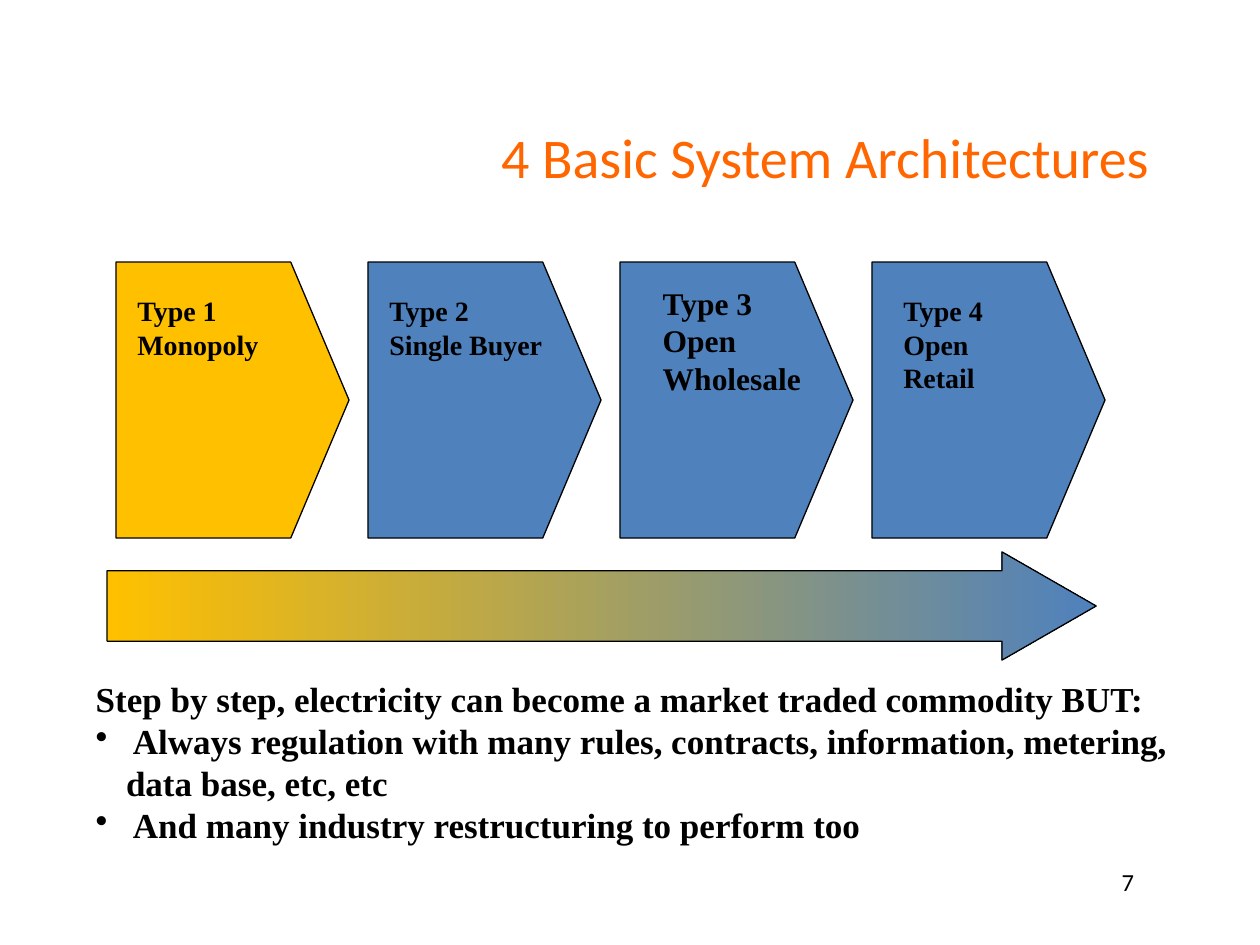
"""Builds a slide on the four basic architectures of an electricity system."""
from lxml.etree import SubElement
from pptx import Presentation
from pptx.dml.color import RGBColor as RGB
from pptx.enum.shapes import MSO_SHAPE as SHAPE
from pptx.enum.text import MSO_AUTO_SIZE as FIT, PP_ALIGN as ALIGN
from pptx.oxml.ns import qn
from pptx.util import Inches, Pt

COLORS = {"amber": "FFC000", "blue": "4F81BD", "black": "000000", "orange": "FF6600"}
SERIF, SANS = "Times New Roman", "Calibri"


class ArchitectureSlide:
    def __init__(self, deck):
        self.slide = deck.slides.add_slide(deck.slide_layouts[6])

    def color(self, name):
        return RGB.from_string(COLORS[name])

    def outlined(self, kind, box, adjustments):
        shape = self.slide.shapes.add_shape(kind, *map(Inches, box))
        shape.shadow.inherit = False
        for index, value in enumerate(adjustments):
            shape.adjustments[index] = value
        shape.line.color.rgb = self.color("black")
        shape.line.width = Pt(0.75)
        return shape

    def stage(self, box, fill):
        pentagon = self.outlined(SHAPE.PENTAGON, box, [0.25])
        pentagon.fill.solid()
        pentagon.fill.fore_color.rgb = self.color(fill)

    def progress_arrow(self, box, start, end):
        arrow = self.outlined(SHAPE.RIGHT_ARROW, box, [0.65, 0.87])
        arrow.fill.gradient()
        arrow.fill.gradient_angle = 0
        for stop, name, position in zip(arrow.fill.gradient_stops, (start, end), (0, 1)):
            stop.color.rgb = self.color(name)
            stop.position = position

    def text(self, box, lines, size, font=SANS, color="black", bold=False,
             align=ALIGN.LEFT, wrap=True):
        frame = self.slide.shapes.add_textbox(*map(Inches, box)).text_frame
        frame.word_wrap = wrap
        frame.text = "\n".join(lines)
        for paragraph in frame.paragraphs:
            paragraph.alignment = align
            paragraph.font.name = font
            paragraph.font.size = Pt(size)
            paragraph.font.bold = bold
            paragraph.font.color.rgb = self.color(color)
        return frame

    def serif_text(self, box, lines, size, wrap=False):
        frame = self.text(box, lines, size, SERIF, bold=True, wrap=wrap)
        frame.auto_size = FIT.SHAPE_TO_FIT_TEXT
        frame.margin_left = Inches(0.09)
        frame.margin_top = frame.margin_right = frame.margin_bottom = 0
        return frame

    def remarks(self, box, heading, points, size):
        frame = self.serif_text(box, [], size, wrap=True)
        for index, line in enumerate([heading, *points]):
            paragraph = frame.add_paragraph() if index else frame.paragraphs[0]
            paragraph.text = line
            if index:
                properties = paragraph._p.get_or_add_pPr()
                properties.set("marL", str(Inches(0.24)))
                properties.set("indent", str(Inches(-0.24)))
                SubElement(properties, qn("a:buChar")).set("char", "•")
            paragraph.font.name = SERIF
            paragraph.font.size = Pt(size)
            paragraph.font.bold = True
            paragraph.font.color.rgb = self.color("black")


def main():
    deck = Presentation()
    deck.slide_width, deck.slide_height = Inches(10), Inches(7.5)
    page = ArchitectureSlide(deck)

    stages = [
        ("amber", ["Type 1", "Monopoly"], (1, 2.33, 1.07, 0.54), 16),
        ("blue", ["Type 2", "Single Buyer"], (3, 2.33, 1.32, 0.54), 16),
        ("blue", ["Type 3", "Open", "Wholesale"], (5.17, 2.25, 1.2, 0.91), 18),
        ("blue", ["Type 4", "Open", "Retail"], (7.08, 2.33, 0.73, 0.81), 16),
    ]
    for index, (fill, label, label_box, size) in enumerate(stages):
        page.stage((0.92 + 2 * index, 2.08, 1.85, 2.19), fill)
        page.serif_text(label_box, label, size)

    page.progress_arrow((0.85, 4.38, 7.85, 0.86), "amber", "blue")
    page.remarks(
        (0.67, 5.38, 8.74, 1.35),
        "Step by step, electricity can become a market traded commodity BUT:",
        [" Always regulation with many rules, contracts, information, metering, "
         "data base, etc, etc",
         " And many industry restructuring to perform too"],
        20)
    page.text((7.17, 6.83, 1.93, 0.52), ["7"], 14, align=ALIGN.RIGHT)
    page.text((3.58, 0.92, 5.94, 0.79), ["4 Basic System Architectures"], 32,
              color="orange", align=ALIGN.CENTER)
    deck.save("out.pptx")


if __name__ == "__main__":
    main()
